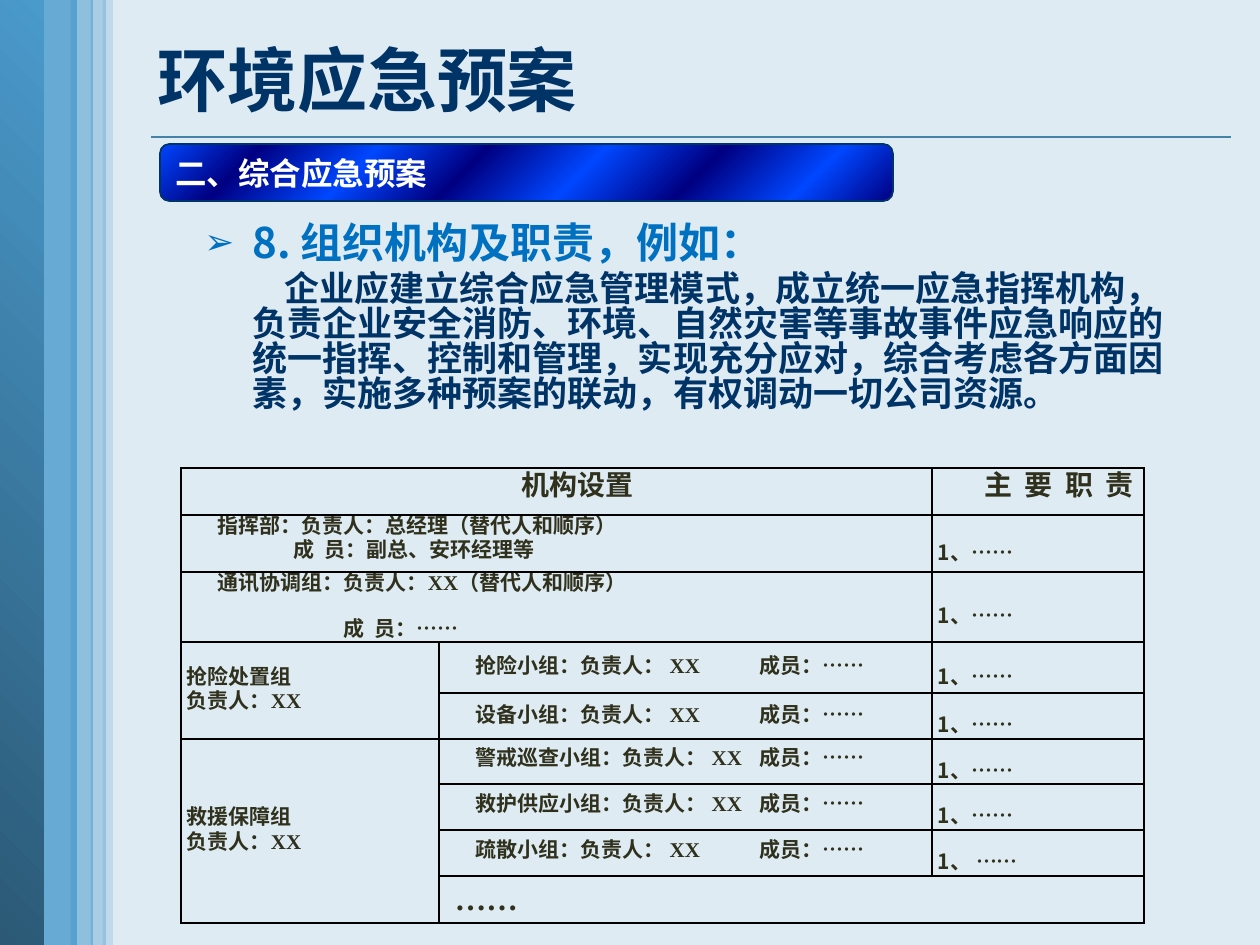
from lxml import etree
from pptx import Presentation, util as u
from pptx.dml.color import RGBColor
from pptx.enum import shapes, text
from pptx.oxml.ns import qn

SCALE = 914400 / 126  # EMU in one px
COLORS = {"background": "DFEBF3", "rail": "4A9ACC", "rail_dark": "2B5976",
          "rule": "4582A7", "navy": "003366", "heading": "0070C0", "white": "FFFFFF",
          "pill_dark": "000082", "pill_light": "0047FF", "table": "30311D", "border": "000000"}
CJK = "Noto Sans CJK SC"
TIMES = "Times New Roman"


def px(length):
    return u.Emu(round(length * SCALE))


def rgb(name):
    return RGBColor.from_string(COLORS[name])


def add_xml(parent, tag, **attributes):
    return etree.SubElement(parent, qn(tag), {k: str(v) for k, v in attributes.items()})


def set_attributes(target, values):
    for name, value in values.items():
        setattr(target, name, value)


def set_frame(frame, **values):
    set_attributes(frame, {"word_wrap": True, "vertical_anchor": text.MSO_ANCHOR.TOP, **values})


def write(paragraph, words, size, color, font=CJK, margin=0, indent=0, tab=None, **layout):
    """Fill one paragraph; margin, indent and tab are in px."""
    set_attributes(paragraph, {"alignment": text.PP_ALIGN.LEFT, **layout})
    properties = paragraph._p.get_or_add_pPr()
    properties.set("marL", str(px(margin)))
    properties.set("indent", str(px(indent)))
    if tab:
        add_xml(add_xml(properties, "a:tabLst"), "a:tab", pos=px(tab), algn="l")
    run = paragraph.add_run()
    run.text = words
    set_attributes(run.font, {"size": u.Pt(size), "bold": True, "name": font})
    run.font.color.rgb = rgb(color)
    add_xml(run._r.get_or_add_rPr(), "a:ea", typeface=CJK)


def set_gradient(shape, stops, angle=None):
    """Linear gradient at an angle, or circular from the far corner without one."""
    shape.fill.gradient()
    gradient = shape._element.spPr.find(qn("a:gradFill"))
    for child in list(gradient):
        gradient.remove(child)
    stop_list = add_xml(gradient, "a:gsLst")
    for position, color in stops:
        stop = add_xml(stop_list, "a:gs", pos=position * 1000)
        add_xml(stop, "a:srgbClr", val=COLORS[color])
    if angle is None:
        circle = add_xml(gradient, "a:path", path="circle")
        add_xml(circle, "a:fillToRect", l=100000, t=100000)
    else:
        add_xml(gradient, "a:lin", ang=angle * 60000, scaled=0)


def add_box(slide, kind, left, top, width, height):
    shape = slide.shapes.add_shape(kind, px(left), px(top), px(width), px(height))
    shape.shadow.inherit = False
    return shape


def add_text(slide, left, top, width, height):
    return slide.shapes.add_textbox(px(left), px(top), px(width), px(height)).text_frame


def build_rail(slide, left, top, height):
    # Offset, width and opacity of each stripe; no opacity means the gradient
    for offset, width, opacity in [(38, 39, 80), (-1, 45, None), (103, 10, 20),
                                   (71, 22, 54), (91, 15, 37)]:
        stripe = add_box(slide, shapes.MSO_SHAPE.RECTANGLE, left + offset, top, width, height)
        stripe.line.fill.background()
        if opacity is None:
            set_gradient(stripe, [(0, "rail_dark"), (100, "rail")], 315)
        else:
            stripe.fill.solid()
            stripe.fill.fore_color.rgb = rgb("rail")
            color = stripe._element.spPr.find(qn("a:solidFill"))[0]
            add_xml(color, "a:alpha", val=opacity * 1000)


def build_title(slide, left, top, width, height):
    rule_y = top + 128
    rule = slide.shapes.add_connector(shapes.MSO_CONNECTOR.STRAIGHT, px(left + 6), px(rule_y),
                                      px(left + width - 12), px(rule_y))
    rule.line.color.rgb = rgb("rule")
    rule.line.width = u.Pt(1)
    add_xml(rule._element.spPr, "a:effectLst")
    frame = add_text(slide, left, top, width, height)
    set_frame(frame, vertical_anchor=text.MSO_ANCHOR.MIDDLE)
    write(frame.paragraphs[0], "环境应急预案", 40, "navy", "Arial")


def build_section_pill(slide, left, top, width, height):
    pill = add_box(slide, shapes.MSO_SHAPE.ROUNDED_RECTANGLE, left, top, width, height)
    positions = [0, 13, 28, 43, 58, 72, 87, 100]
    set_gradient(pill, [(position, ("pill_dark", "pill_light")[i % 2])
                        for i, position in enumerate(positions)])
    pill.line.color.rgb = rgb("navy")
    pill.line.width = u.Pt(1)
    set_frame(pill.text_frame, word_wrap=False, vertical_anchor=text.MSO_ANCHOR.MIDDLE)
    write(pill.text_frame.paragraphs[0], "二、综合应急预案", 18, "white")


def build_body(slide, left, top, width, height):
    frame = add_text(slide, left, top, width, height)
    set_frame(frame)
    spacing = {"line_spacing": 0.83, "space_before": u.Pt(4)}
    heading = frame.paragraphs[0]
    write(heading, "8. 组织机构及职责，例如：", 24, "heading", margin=48, indent=-48, **spacing)
    properties = heading._p.pPr
    add_xml(properties, "a:buSzPct", val=85000)
    add_xml(properties, "a:buFont", typeface="Arial")
    add_xml(properties, "a:buChar", char="➢")
    write(frame.add_paragraph(),
          "企业应建立综合应急管理模式，成立统一应急指挥机构，负责企业安全消防、环境、"
          "自然灾害等事故事件应急响应的统一指挥、控制和管理，实现充分应对，综合考虑各方面因素，"
          "实施多种预案的联动，有权调动一切公司资源。",
          20, "navy", "Arial", margin=48, indent=32, **spacing)


def style_cell(cell):
    cell.fill.background()
    set_attributes(cell, {"margin_left": px(6), "margin_right": px(6), "margin_top": 0,
                          "margin_bottom": 0, "vertical_anchor": text.MSO_ANCHOR.MIDDLE})
    properties = cell._tc.get_or_add_tcPr()
    for index, side in enumerate(("a:lnL", "a:lnR", "a:lnT", "a:lnB")):
        line = etree.Element(qn(side), w=str(u.Pt(1)))
        add_xml(add_xml(line, "a:solidFill"), "a:srgbClr", val=COLORS["border"])
        properties.insert(index, line)


def build_table(slide, left, top, columns, rows):
    table_shape = slide.shapes.add_table(len(rows), len(columns), px(left), px(top),
                                         px(sum(columns)), px(sum(rows)))
    table = table_shape.table
    set_attributes(table, {"first_row": False, "horz_banding": False})
    for column, width in zip(table.columns, columns):
        column.width = px(width)
    for row, height in zip(table.rows, rows):
        row.height = px(height)
    for cell in table.iter_cells():
        style_cell(cell)
    for first, last in [((0, 0), (0, 1)), ((1, 0), (1, 1)), ((2, 0), (2, 1)),
                        ((3, 0), (4, 0)), ((5, 0), (8, 0)), ((8, 1), (8, 2))]:
        table.cell(*first).merge(table.cell(*last))

    def fill_cell(row, column, *lines, size=12, font=TIMES, **layout):
        """Each line is its words and the layout that differs from the cell's."""
        frame = table.cell(row, column).text_frame
        for index, (words, own) in enumerate(lines):
            paragraph = frame.add_paragraph() if index else frame.paragraphs[0]
            write(paragraph, words, size, "table", font,
                  **{"line_spacing": u.Pt(14), **layout, **own})

    # Header
    for column, words in [(0, "机构设置"), (2, "主  要  职  责")]:
        fill_cell(0, column, (words, {}), size=16, indent=42, alignment=text.PP_ALIGN.CENTER)
    # Command and communication groups
    fill_cell(1, 0, ("指挥部：负责人：总经理（替代人和顺序）", {"indent": 31}),
              ("成  员：副总、安环经理等", {"indent": 107}))
    fill_cell(2, 0, ("通讯协调组：负责人：XX（替代人和顺序）", {"indent": 31}),
              ("成  员：……", {"indent": 157, "line_spacing": 1.5}))
    for row in (1, 2):
        table.cell(row, 0).vertical_anchor = text.MSO_ANCHOR.TOP
    # Groups and their teams
    for row, group in [(3, "抢险处置组"), (5, "救援保障组")]:
        fill_cell(row, 0, (group, {}), ("负责人：XX", {}))
    for row, team in enumerate(["抢险", "设备", "警戒巡查", "救护供应", "疏散"], 3):
        fill_cell(row, 1, (f"{team}小组：负责人： XX\t成员：……", {}), indent=31,
                  tab=262 + 21 * len(team), line_spacing=u.Pt(14 if row < 5 else 12))
    # Duties
    for row in range(1, 8):
        fill_cell(row, 2, ("1、 ……" if row == 7 else "1、……", {}), font=CJK, line_spacing=1.5)
    fill_cell(8, 1, ("……", {}), size=18, indent=10, line_spacing=1.0)


def main():
    presentation = Presentation()
    set_attributes(presentation, {"slide_width": px(1260), "slide_height": px(945)})
    slide = presentation.slides.add_slide(presentation.slide_layouts[6])
    slide.background.fill.solid()
    slide.background.fill.fore_color.rgb = rgb("background")
    build_rail(slide, 0, 0, 945)
    build_title(slide, 145, 9, 1098, 140)
    build_section_pill(slide, 160, 144, 733, 57)
    build_body(slide, 192, 219, 1012, 244)
    build_table(slide, 181, 468, [258, 493, 212], [47, 57, 70, 51, 46, 45, 46, 46, 47])
    presentation.save("out.pptx")


if __name__ == "__main__":
    main()
